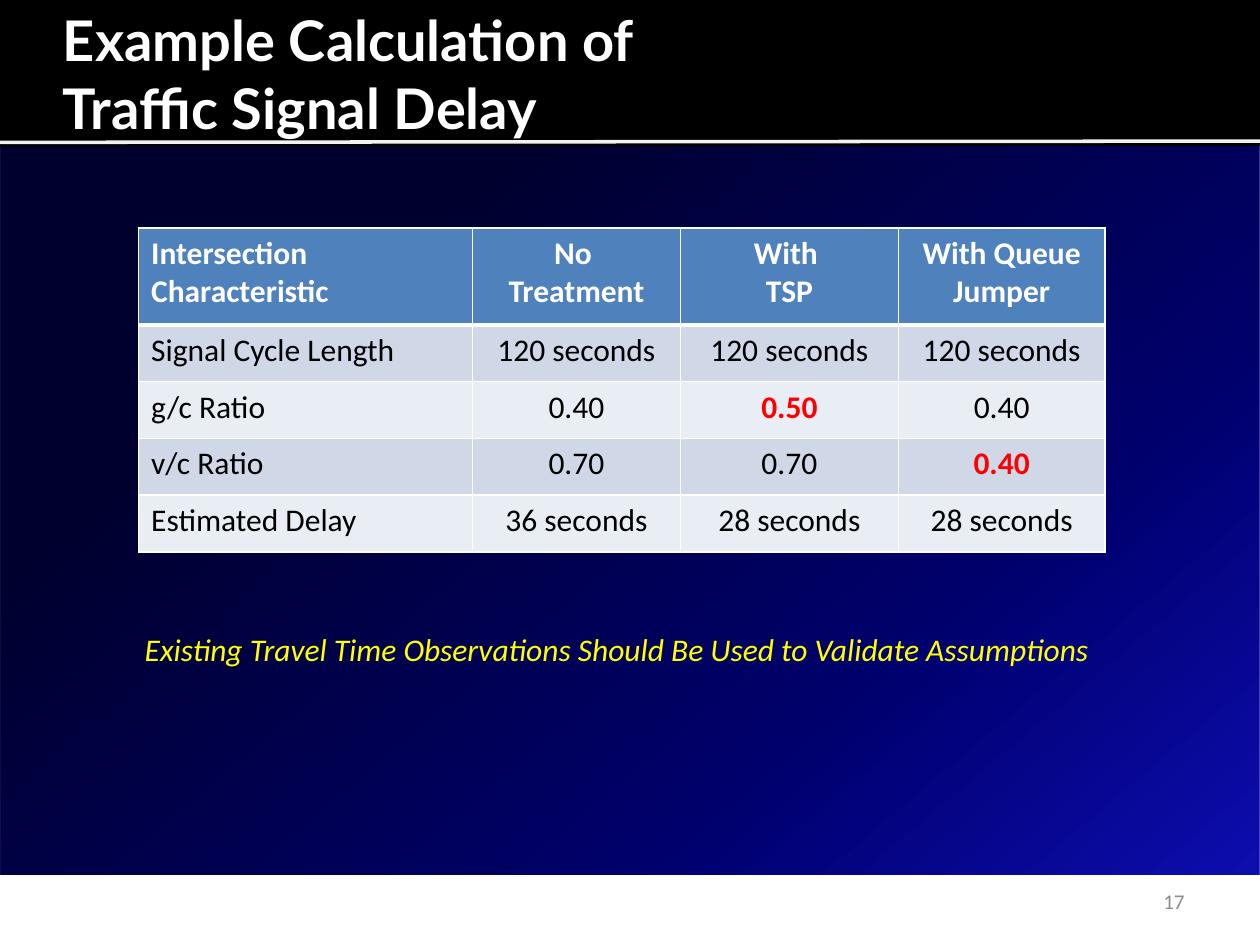
from dataclasses import dataclass

from lxml.etree import SubElement
from pptx import Presentation
from pptx.dml.color import RGBColor
from pptx.enum.shapes import MSO_CONNECTOR, MSO_SHAPE
from pptx.enum.text import MSO_ANCHOR, PP_ALIGN
from pptx.oxml import parse_xml
from pptx.oxml.ns import nsdecls, qn
from pptx.util import Inches, Pt

WHITE, BLACK, RED = "FFFFFF", "000000", "FF0000"
HEADER_FILL = "4F81BD"
BAND_FILLS = ("D0D8E8", "E9EDF4")
COLUMN_WIDTHS = (2.65, 1.65, 1.73, 1.64)
HEADER_HEIGHT, ROW_HEIGHT = 0.77, 0.45
ROWS = (
    ("Intersection Characteristic", "No \nTreatment", "With \nTSP", "With Queue Jumper"),
    ("Signal Cycle Length", "120 seconds", "120 seconds", "120 seconds"),
    ("g/c Ratio", "0.40", "0.50", "0.40"),
    ("v/c Ratio", "0.70", "0.70", "0.40"),
    ("Estimated Delay", "36 seconds", "28 seconds", "28 seconds"),
)
CHANGED_CELLS = {(2, 2), (3, 3)}


@dataclass(frozen=True)
class Area:
    left: float
    top: float
    width: float
    height: float

    def lengths(self) -> tuple:
        return tuple(Inches(n) for n in (self.left, self.top, self.width, self.height))


@dataclass(frozen=True)
class TextStyle:
    size: float
    color: str
    name: str = "Calibri"
    bold: bool = False
    italic: bool = False
    align: PP_ALIGN = PP_ALIGN.LEFT


@dataclass(frozen=True)
class Label:
    text: str
    area: Area
    style: TextStyle
    anchor: MSO_ANCHOR = MSO_ANCHOR.MIDDLE
    margins: tuple = (0.1, 0.05)
    wrap: bool = True


LABELS = (
    Label("Example Calculation of\vTraffic Signal Delay", Area(0.5, 0.18, 9, 0.8),
          TextStyle(32, WHITE, "Lato", bold=True), margins=(0, 0)),
    Label("17", Area(7.17, 6.95, 2.33, 0.4), TextStyle(12, "8C8C8C", align=PP_ALIGN.RIGHT)),
    Label("Existing Travel Time Observations Should Be Used to Validate Assumptions",
          Area(1.05, 4.95, 7.87, 0.4), TextStyle(18, "FFFF00", italic=True),
          anchor=MSO_ANCHOR.TOP, wrap=False),
)


def rgb(value: str) -> RGBColor:
    return RGBColor.from_string(value)


def write(frame, text: str, style: TextStyle) -> None:
    frame.text = text
    for para in frame.paragraphs:
        para.alignment = style.align
        font = para.font
        font.name, font.size = style.name, Pt(style.size)
        font.bold, font.italic = style.bold, style.italic
        font.color.rgb = rgb(style.color)


def add_label(page, label: Label) -> None:
    frame = page.shapes.add_textbox(*label.area.lengths()).text_frame
    frame.word_wrap = label.wrap
    frame.vertical_anchor = label.anchor
    side, edge = (Inches(n) for n in label.margins)
    frame.margin_left = frame.margin_right = side
    frame.margin_top = frame.margin_bottom = edge
    write(frame, label.text, label.style)


def add_panel(page, area: Area):
    panel = page.shapes.add_shape(MSO_SHAPE.RECTANGLE, *area.lengths())
    panel.shadow.inherit = False
    panel.line.fill.background()
    panel.fill.solid()
    panel.fill.fore_color.rgb = rgb(BLACK)
    return panel


def set_backdrop_gradient(panel) -> None:
    gradient = parse_xml(
        f'<a:gradFill {nsdecls("a")} rotWithShape="1"><a:gsLst>'
        '<a:gs pos="25000"><a:srgbClr val="00002E"/></a:gs>'
        '<a:gs pos="71000"><a:srgbClr val="00006D"/></a:gs>'
        '<a:gs pos="100000"><a:srgbClr val="0000AC"><a:alpha val="94000"/></a:srgbClr></a:gs>'
        '</a:gsLst><a:lin ang="3000000" scaled="0"/></a:gradFill>'
    )
    properties = panel.element.spPr
    properties.replace(properties.find(qn("a:solidFill")), gradient)


def add_header_rule(page) -> None:
    rule = page.shapes.add_connector(
        MSO_CONNECTOR.STRAIGHT, Inches(0), Inches(1.13), Inches(10), Inches(1.12))
    rule.line.color.rgb = rgb("F2F2F2")
    rule.line.width = Pt(2)
    SubElement(rule.element.spPr, qn("a:effectLst"))


def set_borders(cell, bottom: float, top: float) -> None:
    properties = cell._tc.get_or_add_tcPr()
    widths = {"lnL": 1, "lnR": 1, "lnT": top, "lnB": bottom}
    for position, (tag, width) in enumerate(widths.items()):
        properties.insert(position, parse_xml(
            f'<a:{tag} {nsdecls("a")} w="{Pt(width)}"><a:solidFill>'
            f'<a:srgbClr val="{WHITE}"/></a:solidFill></a:{tag}>'))


def add_delay_table(page) -> None:
    height = HEADER_HEIGHT + ROW_HEIGHT * (len(ROWS) - 1)
    area = Area(1.1, 1.81, sum(COLUMN_WIDTHS), height)
    table = page.shapes.add_table(len(ROWS), len(COLUMN_WIDTHS), *area.lengths()).table
    for column, width in zip(table.columns, COLUMN_WIDTHS):
        column.width = Inches(width)
    for r, texts in enumerate(ROWS):
        header = r == 0
        table.rows[r].height = Inches(HEADER_HEIGHT if header else ROW_HEIGHT)
        for c, text in enumerate(texts):
            changed = (r, c) in CHANGED_CELLS
            color = WHITE if header else RED if changed else BLACK
            align = PP_ALIGN.CENTER if c else PP_ALIGN.LEFT
            cell = table.cell(r, c)
            write(cell.text_frame, text,
                  TextStyle(18, color, bold=header or changed, align=align))
            cell.fill.solid()
            cell.fill.fore_color.rgb = rgb(HEADER_FILL if header else BAND_FILLS[(r - 1) % 2])
            set_borders(cell, bottom=3 if header else 1, top=3 if r == 1 else 1)


def main() -> None:
    deck = Presentation()
    deck.slide_width, deck.slide_height = Inches(10), Inches(7.5)
    page = deck.slides.add_slide(deck.slide_layouts[6])
    set_backdrop_gradient(add_panel(page, Area(0, 1.08, 10, 5.86)))
    add_panel(page, Area(0, 0, 10, 1.16))
    add_header_rule(page)
    add_delay_table(page)
    for label in LABELS:
        add_label(page, label)
    deck.save("out.pptx")


if __name__ == "__main__":
    main()
